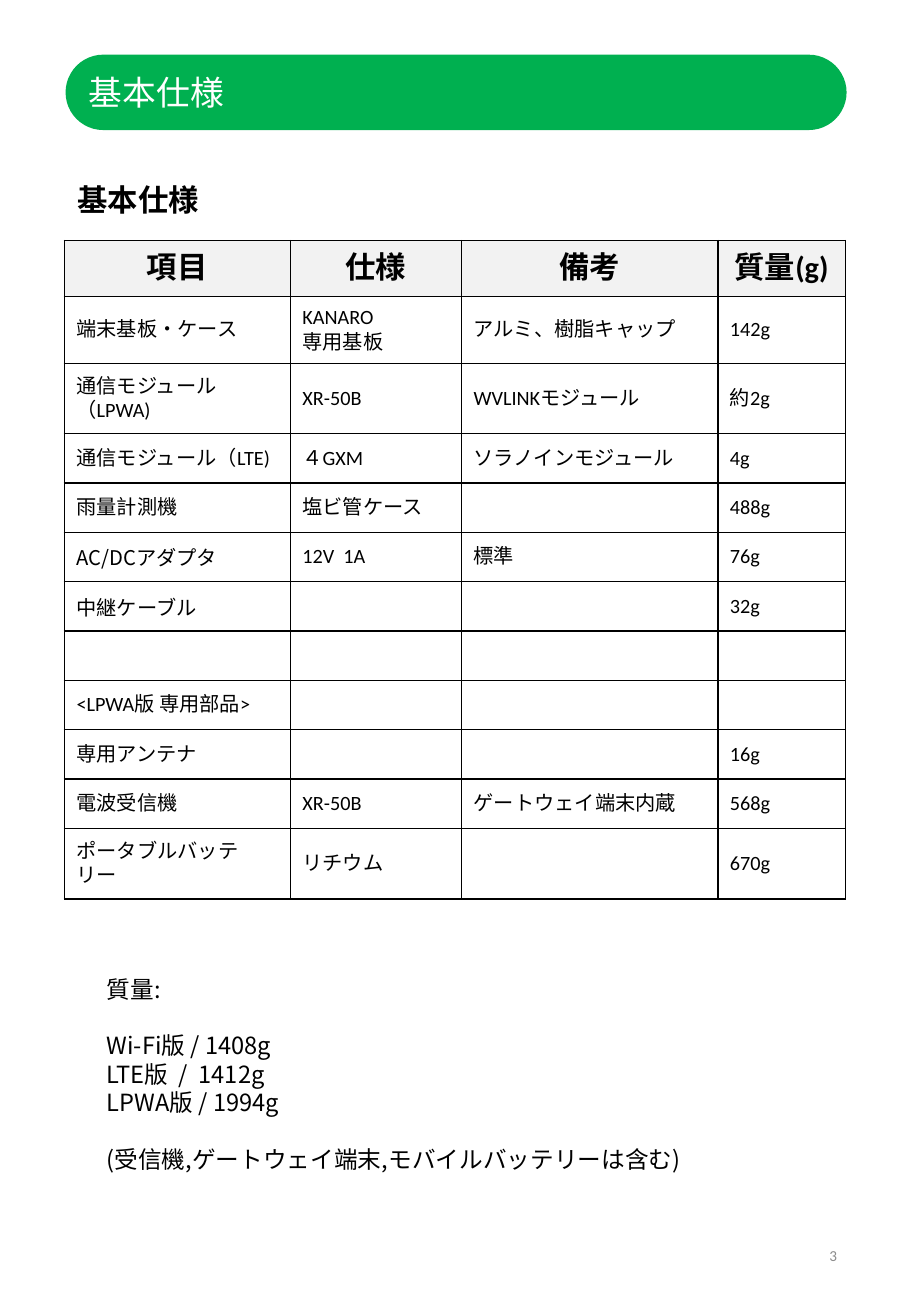
import pptx
import pptx.util
import pptx.dml.color
import pptx.enum.shapes
import pptx.enum.text
import pptx.oxml
import pptx.oxml.ns

Inches = pptx.util.Inches
Pt = pptx.util.Pt
RGBColor = pptx.dml.color.RGBColor
PP_ALIGN = pptx.enum.text.PP_ALIGN
MIDDLE = pptx.enum.text.MSO_ANCHOR.MIDDLE

GREEN = RGBColor(0x00, 0xB0, 0x50)
WHITE = RGBColor(0xFF, 0xFF, 0xFF)
BLACK = RGBColor(0x00, 0x00, 0x00)
GREY = RGBColor(0x8C, 0x8C, 0x8C)
HEADER_FILL = RGBColor(0xF2, 0xF2, 0xF2)
LATIN = "Calibri"
JAPANESE = "Noto Sans CJK JP"

HEADING = "基本仕様"
PAGE_NUMBER = "3"
SPEC_HEADER = ("項目", "仕様", "備考", "質量(g)")
SPECS = [
    ("端末基板・ケース", "KANARO\n専用基板", "アルミ、樹脂キャップ", "142g"),
    ("通信モジュール（LPWA)", "XR-50B", "WVLINKモジュール", "約2g"),
    ("通信モジュール（LTE)", "４GXM", "ソラノインモジュール", "4g"),
    ("雨量計測機", "塩ビ管ケース", "", "488g"),
    ("AC/DCアダプタ", "12V  1A", "標準", "76g"),
    ("中継ケーブル", "", "", "32g"),
    ("", "", "", ""),
    ("<LPWA版 専用部品>", "", "", ""),
    ("専用アンテナ", "", "", "16g"),
    ("電波受信機", "XR-50B", "ゲートウェイ端末内蔵", "568g"),
    ("ポータブルバッテリー", "リチウム", "", "670g"),
]
JAPANESE_ITEMS = ("AC/DCアダプタ", "中継ケーブル")
COLUMN_WIDTHS = (1.86, 1.41, 2.11, 1.05)
SINGLE_LINE = 3.25 / 8
WRAPPED = 0.58
ROW_HEIGHTS = [0.46, 0.55, WRAPPED] + [SINGLE_LINE] * 8 + [WRAPPED]
MASS_GROUPS = [
    ["質量:"],
    ["Wi-Fi版 / 1408g", "LTE版  /  1412g", "LPWA版 / 1994g"],
    ["(受信機,ゲートウェイ端末,モバイルバッテリーは含む)"],
]
MASS_LINE = Pt(16.8)
LEFT = 0.54
WIDTH = 6.43


def style(paragraph, size, color, face=JAPANESE, bold=False, align=PP_ALIGN.LEFT):
    paragraph.alignment = align
    font = paragraph.font
    font.size = Pt(size)
    font.bold = bold
    font.name = face
    font.color.rgb = color
    east_asian = pptx.oxml.parse_xml(
        f'<a:ea {pptx.oxml.ns.nsdecls("a")} typeface="{face}"/>')
    paragraph._p.pPr.find(pptx.oxml.ns.qn("a:defRPr")).append(east_asian)


def add_text(slide, left, top, width, height):
    frame = slide.shapes.add_textbox(
        Inches(left), Inches(top), Inches(width), Inches(height)).text_frame
    frame.word_wrap = True
    return frame


def add_borders(cell):
    properties = cell._tc.get_or_add_tcPr()
    for position, side in enumerate(("lnL", "lnR", "lnT", "lnB")):
        properties.insert(position, pptx.oxml.parse_xml(
            f'<a:{side} {pptx.oxml.ns.nsdecls("a")} w="{Pt(1)}"><a:solidFill>'
            f'<a:srgbClr val="{BLACK}"/></a:solidFill></a:{side}>'))


def add_title(slide):
    bar = slide.shapes.add_shape(
        pptx.enum.shapes.MSO_SHAPE.ROUNDED_RECTANGLE,
        Inches(LEFT), Inches(0.45), Inches(WIDTH), Inches(0.62))
    bar.adjustments[0] = 0.5
    bar.shadow.inherit = False
    bar.fill.solid()
    bar.fill.fore_color.rgb = GREEN
    bar.line.fill.background()
    title = slide.shapes.title
    title._element.addprevious(bar._element)
    title.left, title.top = Inches(LEFT + 0.09), Inches(0.45)
    title.width, title.height = Inches(WIDTH - 0.18), Inches(0.62)
    title.text_frame.text = HEADING
    title.text_frame.vertical_anchor = MIDDLE
    style(title.text_frame.paragraphs[0], 20, WHITE)


def add_specs(slide):
    rows = [SPEC_HEADER, *SPECS]
    table = slide.shapes.add_table(
        len(rows), len(SPEC_HEADER), Inches(0.53), Inches(1.98),
        Inches(WIDTH), Inches(sum(ROW_HEIGHTS))).table
    table.first_row = False
    table.horz_banding = False
    for column, width in zip(table.columns, COLUMN_WIDTHS):
        column.width = Inches(width)
    for row, height, values in zip(table.rows, ROW_HEIGHTS, rows):
        header = values is SPEC_HEADER
        row.height = Inches(height)
        for cell, value in zip(row.cells, values):
            cell.text = value
            cell.vertical_anchor = MIDDLE
            if header:
                cell.fill.solid()
                cell.fill.fore_color.rgb = HEADER_FILL
            else:
                cell.fill.background()
            add_borders(cell)
            face = JAPANESE if value in JAPANESE_ITEMS else LATIN
            for paragraph in cell.text_frame.paragraphs:
                style(paragraph, 18 if header else 12, BLACK, face, header,
                      PP_ALIGN.CENTER if header else PP_ALIGN.LEFT)


def add_masses(slide):
    frame = add_text(slide, 0.78, 7.97, 6.18, 1.75)
    lines = [(line, group > 0 and position == 0)
             for group, members in enumerate(MASS_GROUPS)
             for position, line in enumerate(members)]
    frame.text = "\n".join(line for line, _ in lines)
    for paragraph, (_, starts_group) in zip(frame.paragraphs, lines):
        paragraph.line_spacing = MASS_LINE
        if starts_group:
            paragraph.space_before = MASS_LINE
        style(paragraph, 14, BLACK)


def main():
    deck = pptx.Presentation()
    deck.slide_width, deck.slide_height = Inches(7.5), Inches(10.83)
    slide = deck.slides.add_slide(deck.slide_layouts[5])
    add_title(slide)
    page = add_text(slide, 5.3, 10.04, 1.69, 0.58)
    page.text = PAGE_NUMBER
    page.vertical_anchor = MIDDLE
    style(page.paragraphs[0], 9, GREY, LATIN, align=PP_ALIGN.RIGHT)
    add_specs(slide)
    subheading = add_text(slide, LEFT, 1.44, WIDTH, 0.4)
    subheading.text = HEADING
    style(subheading.paragraphs[0], 18, BLACK, bold=True)
    add_masses(slide)
    deck.save("out.pptx")


if __name__ == "__main__":
    main()
